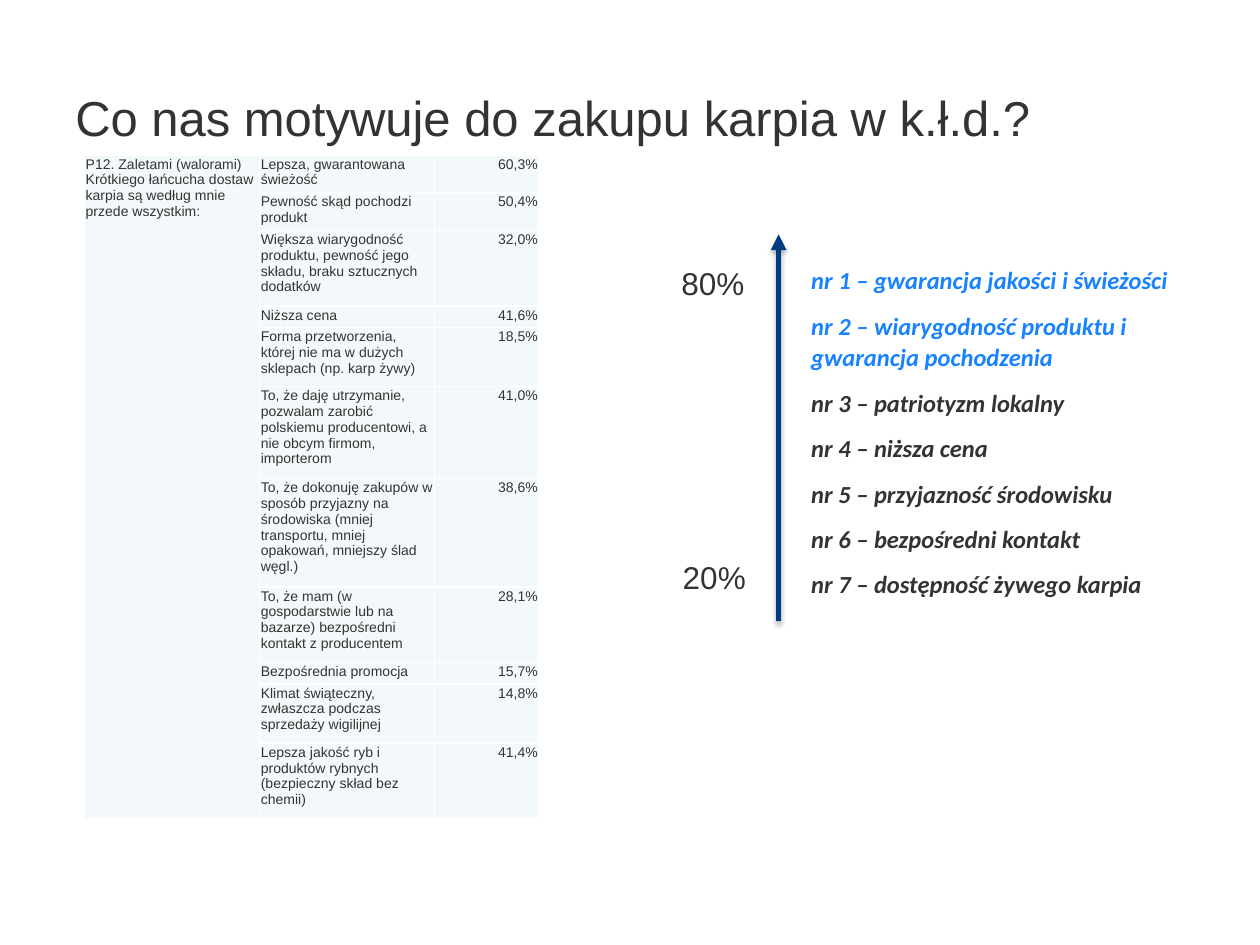
from lxml import etree
from pptx import Presentation
from pptx.dml.color import RGBColor
from pptx.enum.shapes import MSO_CONNECTOR
from pptx.enum.text import MSO_ANCHOR, PP_ALIGN
from pptx.oxml import parse_xml
from pptx.oxml.ns import nsdecls, qn
from pptx.util import Inches, Pt

COLORS = {
    "text": "333333",
    "highlight": "1982FF",
    "arrow": "003A7F",
    "cell": "F3F9FA",
    "border": "FFFFFF",
    "shadow": "000000",
}


def set_font(paragraph, size, color="text", name="Arial"):
    paragraph.font.name = name
    paragraph.font.size = Pt(size)
    paragraph.font.color.rgb = RGBColor.from_string(COLORS[color])


def add_text(left, top, width, height, text, size):
    frame = slide.shapes.add_textbox(
        Inches(left), Inches(top), Inches(width), Inches(height)).text_frame
    frame.word_wrap = True
    frame.text = text
    for paragraph in frame.paragraphs:
        set_font(paragraph, size)
    return frame


prs = Presentation()
prs.slide_width, prs.slide_height = Inches(10), Inches(7.5)
slide = prs.slides.add_slide(prs.slide_layouts[6])

# Title
title = add_text(0.5, 0.3, 9, 1.25, "Co nas motywuje do zakupu karpia w k.ł.d.?", 28)
title.vertical_anchor = MSO_ANCHOR.MIDDLE

# Survey table: answer, share, row height
question = ("P12. Zaletami (walorami) Krótkiego łańcucha dostaw karpia "
            "są według mnie przede wszystkim:")
answers = [
    ("Lepsza, gwarantowana świeżość", "60,3%", 0.3),
    ("Pewność skąd pochodzi produkt", "50,4%", 0.3),
    ("Większa wiarygodność produktu, pewność jego składu, braku sztucznych dodatków",
     "32,0%", 0.6),
    ("Niższa cena", "41,6%", 0.17),
    ("Forma przetworzenia, której nie ma w dużych sklepach (np. karp żywy)",
     "18,5%", 0.47),
    ("To, że daję utrzymanie, pozwalam zarobić polskiemu producentowi, "
     "a nie obcym firmom, importerom", "41,0%", 0.73),
    ("To, że dokonuję zakupów w sposób przyjazny na środowiska (mniej transportu, "
     "mniej opakowań, mniejszy ślad węgl.)", "38,6%", 0.86),
    ("To, że mam (w gospodarstwie lub na bazarze) bezpośredni kontakt z producentem",
     "28,1%", 0.6),
    ("Bezpośrednia promocja", "15,7%", 0.17),
    ("Klimat świąteczny, zwłaszcza podczas sprzedaży wigilijnej", "14,8%", 0.47),
    ("Lepsza jakość ryb i produktów rybnych (bezpieczny skład bez chemii)",
     "41,4%", 0.6),
]
survey = slide.shapes.add_table(
    len(answers), 3, Inches(0.67), Inches(1.23), Inches(3.61), Inches(5.27)).table
for column, width in zip(survey.columns, (1.39, 1.39, 0.83)):
    column.width = Inches(width)

for row, (answer, share, height) in enumerate(answers):
    survey.rows[row].height = Inches(height)
    for col, text in enumerate((question if row == 0 else "", answer, share)):
        cell = survey.cell(row, col)
        cell.margin_left = cell.margin_right = cell.margin_top = Inches(0.01)
        cell.margin_bottom = 0
        cell.text = text
        paragraph = cell.text_frame.paragraphs[0]
        set_font(paragraph, 8)
        paragraph.font.bold = False
        if col == 2:
            paragraph.alignment = PP_ALIGN.RIGHT
        for side in ("lnL", "lnR", "lnT", "lnB"):
            cell._tc.get_or_add_tcPr().append(parse_xml(
                f'<a:{side} {nsdecls("a")} w="{Pt(1)}"><a:solidFill>'
                f'<a:srgbClr val="{COLORS["border"]}"/></a:solidFill></a:{side}>'))
        cell.fill.solid()
        cell.fill.fore_color.rgb = RGBColor.from_string(COLORS["cell"])
survey.cell(0, 0).merge(survey.cell(len(answers) - 1, 0))

# Ranking of motives, the first two highlighted
motives = [
    "gwarancja jakości i świeżości",
    "wiarygodność produktu i gwarancja pochodzenia",
    "patriotyzm lokalny",
    "niższa cena",
    "przyjazność środowisku",
    "bezpośredni kontakt",
    "dostępność żywego karpia",
]
ranking = add_text(6.34, 2.04, 3.24, 2.79, "\n".join(
    f"nr {rank} – {motive}" for rank, motive in enumerate(motives, 1)), 14)
for index, paragraph in enumerate(ranking.paragraphs):
    set_font(paragraph, 14, "highlight" if index < 2 else "text", "Calibri")
    paragraph.font.bold = paragraph.font.italic = True
    paragraph.line_spacing = 1.07
    paragraph.space_after = Pt(8)

# Upward arrow with a soft shadow
arrow = slide.shapes.add_connector(
    MSO_CONNECTOR.STRAIGHT, Inches(6.18), Inches(4.93), Inches(6.18), Inches(1.86))
arrow.line.color.rgb = RGBColor.from_string(COLORS["arrow"])
arrow.line.width = Pt(3)
etree.SubElement(arrow.line._get_or_add_ln(), qn("a:tailEnd"), type="triangle")
arrow._element.spPr.append(parse_xml(
    f'<a:effectLst {nsdecls("a")}><a:outerShdw blurRad="{Pt(3.1)}" dist="{Pt(1.8)}" '
    f'dir="5400000" rotWithShape="0"><a:srgbClr val="{COLORS["shadow"]}">'
    '<a:alpha val="35000"/></a:srgbClr></a:outerShdw></a:effectLst>'))

# Scale labels
add_text(5.31, 2.05, 1.18, 0.4, "80%", 18)
add_text(5.32, 4.38, 1.18, 0.4, "20%", 18)

prs.save("out.pptx")
